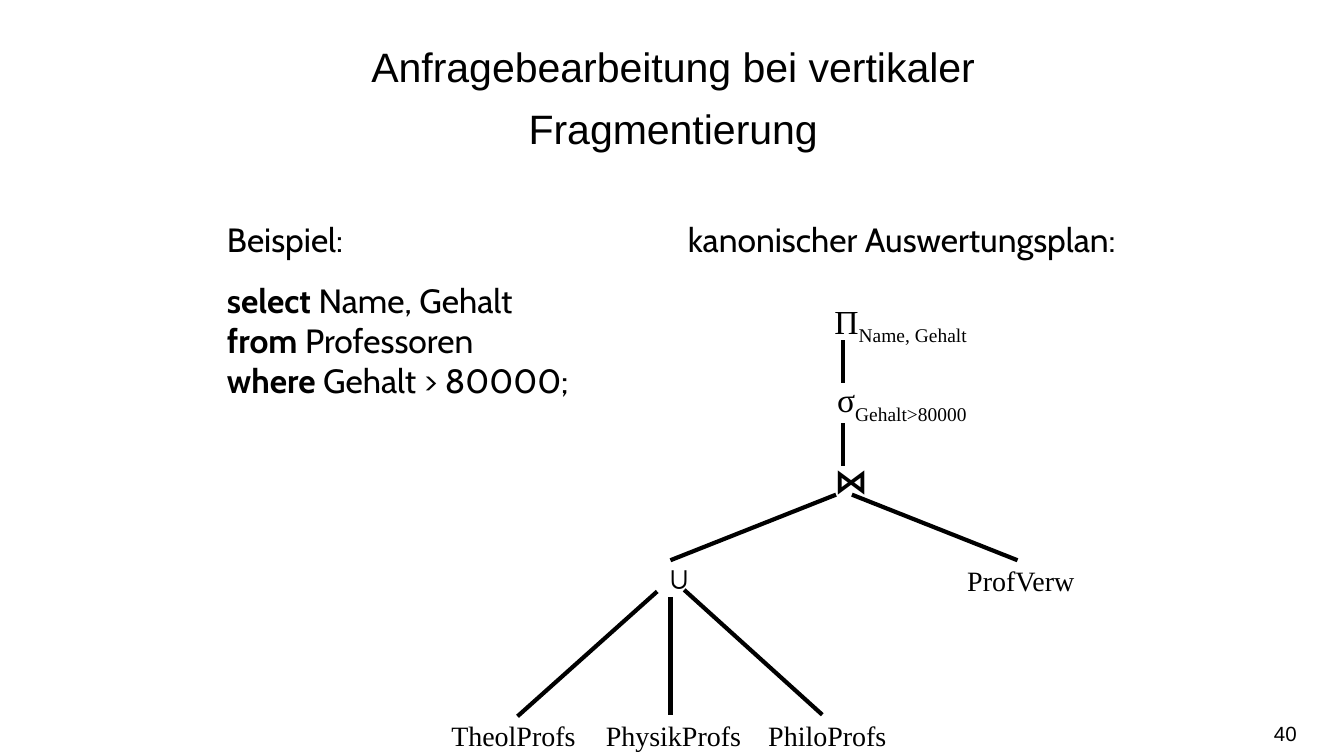
from dataclasses import dataclass

from lxml import etree
from pptx import Presentation
from pptx import util as u
from pptx.dml.color import RGBColor
from pptx.enum import shapes, text
from pptx.oxml import ns


@dataclass(frozen=True)
class Theme:
    ink: RGBColor = RGBColor(0, 0, 0)
    title_font: str = "Arial"
    body_font: str = "Cabin"
    plan_font: str = "Times New Roman"
    join_font: str = "Calibri"
    title_size: int = 22
    body_size: int = 18
    relation_size: int = 15
    number_size: int = 11
    edge_width: float = 2.25


def write(paragraph, words, *, font, size, color, bold=False, baseline=0):
    run = paragraph.add_run()
    run.text = words
    run.font.name = font
    run.font.size = u.Pt(size)
    run.font.bold = bold
    run.font.color.rgb = color
    if baseline:
        run._r.get_or_add_rPr().set("baseline", str(baseline * 1000))


class SlideBuilder:
    def __init__(self, slide, theme):
        self.slide = slide
        self.theme = theme

    def frame(self, left, top, width, height, wrap=False):
        box = self.slide.shapes.add_textbox(
            u.Cm(left), u.Cm(top), u.Cm(width), u.Cm(height))
        frame = box.text_frame
        frame.word_wrap = wrap
        frame.auto_size = (text.MSO_AUTO_SIZE.NONE if wrap
                           else text.MSO_AUTO_SIZE.SHAPE_TO_FIT_TEXT)
        return frame

    def title(self, words, *place):
        line = self.frame(*place, wrap=True).paragraphs[0]
        line.alignment = text.PP_ALIGN.CENTER
        line.line_spacing = 1.25
        write(line, words, font=self.theme.title_font,
              size=self.theme.title_size, color=self.theme.ink)

    def page_number(self, words, *place):
        frame = self.frame(*place, wrap=True)
        frame.margin_left = frame.margin_right = 0
        frame.vertical_anchor = text.MSO_ANCHOR.MIDDLE
        line = frame.paragraphs[0]
        line.alignment = text.PP_ALIGN.RIGHT
        write(line, words, font=self.theme.title_font,
              size=self.theme.number_size, color=self.theme.ink)

    def heading(self, words, *place):
        frame = self.frame(*place)
        write(frame.paragraphs[0], words, font=self.theme.body_font,
              size=self.theme.body_size, color=self.theme.ink)
        return frame

    def query(self, heading, clauses, *place):
        frame = self.heading(heading, *place)
        look = dict(font=self.theme.body_font, size=self.theme.body_size,
                    color=self.theme.ink)
        for index, (keyword, rest) in enumerate(clauses):
            line = frame.add_paragraph()
            if index == 0:
                line.space_before = u.Pt(11)
            write(line, keyword, bold=True, **look)
            write(line, " " + rest, **look)

    def operator(self, symbol, subscript, *place, font=None, bold=False):
        look = dict(font=font or self.theme.plan_font,
                    size=self.theme.body_size, color=self.theme.ink, bold=bold)
        line = self.frame(*place).paragraphs[0]
        write(line, symbol, **look)
        if subscript:
            write(line, subscript, baseline=-25, **look)

    def relation(self, name, *place):
        write(self.frame(*place).paragraphs[0], name, font=self.theme.plan_font,
              size=self.theme.relation_size, color=self.theme.ink)

    def edge(self, *ends):
        edge = self.slide.shapes.add_connector(
            shapes.MSO_CONNECTOR.STRAIGHT, *map(u.Cm, ends))
        edge.line.color.rgb = self.theme.ink
        edge.line.width = u.Pt(self.theme.edge_width)
        etree.SubElement(edge._element.spPr, ns.qn("a:effectLst"))


def main():
    deck = Presentation()
    deck.slide_width, deck.slide_height = u.Cm(25.4), u.Cm(14.29)
    theme = Theme()
    page = SlideBuilder(deck.slides.add_slide(deck.slide_layouts[6]), theme)

    page.page_number("40", 18.82, 13.49, 5.69, 0.76)
    page.title("Anfragebearbeitung bei vertikaler Fragmentierung",
               4.62, 0.43, 16.21, 2.39)

    clauses = [("select", "Name, Gehalt"), ("from", "Professoren"),
               ("where", "Gehalt > 80000;")]
    page.query("Beispiel:", clauses, 4.04, 4.01, 7.42, 3.71)
    page.heading("kanonischer Auswertungsplan:", 12.75, 4.01, 9.14, 1.02)

    page.operator("Π", "Name, Gehalt", 15.52, 5.56, 3.35, 1.02)
    page.operator("σ", "Gehalt>80000", 15.57, 7.04, 3.3, 1.02)
    page.operator("⋈", "", 15.52, 8.56, 0.84, 1.02,
                  font=theme.join_font, bold=True)
    page.operator("∪", "", 12.27, 10.39, 1.02, 1.02)

    fragments = [("TheolProfs", 8.28, 2.9), ("PhysikProfs", 11.2, 3.1),
                 ("PhiloProfs", 14.27, 2.77)]
    for name, left, width in fragments:
        page.relation(name, left, 13.46, width, 0.89)
    page.relation("ProfVerw", 18.03, 10.52, 2.57, 0.89)

    root_x, union_x = 15.93, 12.67
    for top in (6.43, 8.0):
        page.edge(root_x, top, root_x, top + 0.81)
    page.edge(16.1, 9.35, 19.23, 10.59)
    page.edge(15.8, 9.35, union_x, 10.59)
    page.edge(12.42, 11.18, 9.78, 13.54)
    page.edge(12.93, 11.15, 15.54, 13.51)
    page.edge(union_x, 11.28, union_x, 13.51)

    deck.save("out.pptx")


if __name__ == "__main__":
    main()
